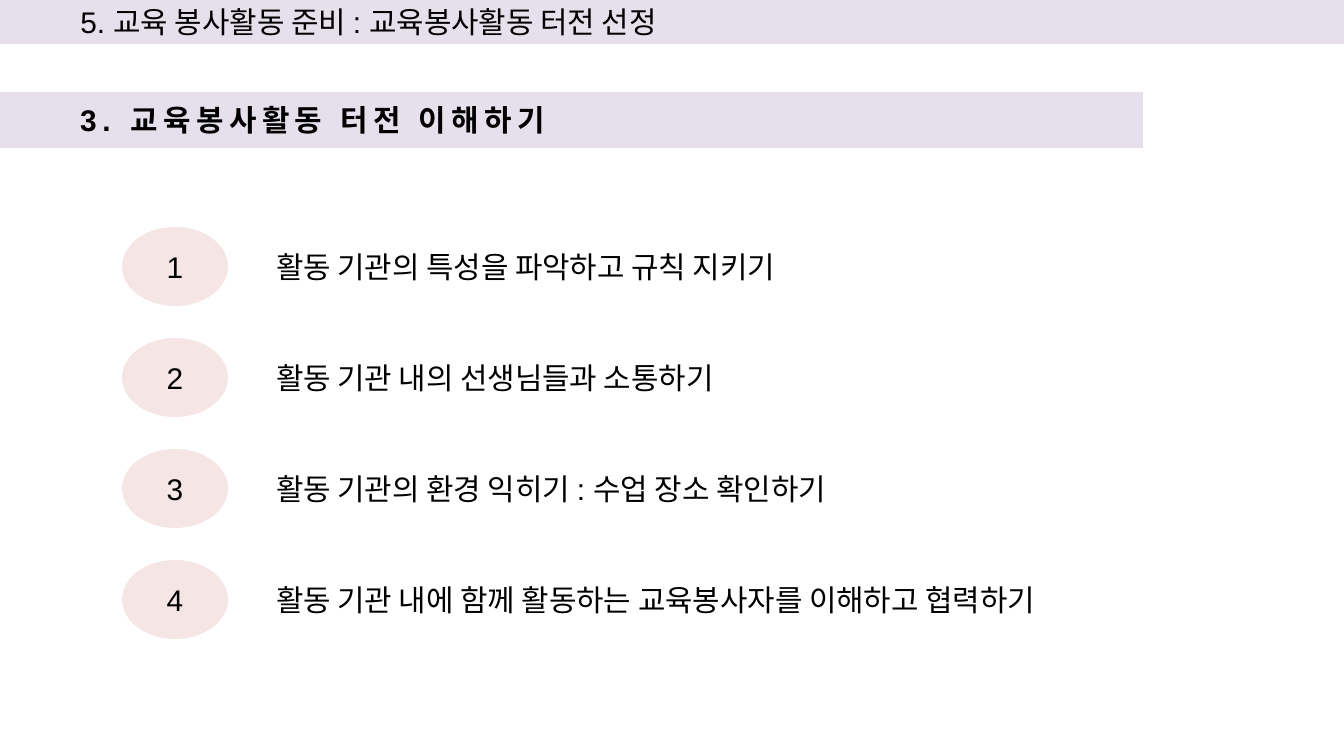
from lxml import etree
from pptx import Presentation
from pptx import util as u
from pptx.dml.color import RGBColor
from pptx.enum import shapes, text
from pptx.oxml.ns import qn

EMU_PER_PX = 914400 / 134.4
LILAC, ROSE, BLACK = "E6E0EC", "F2DCDB", "000000"
LEFT, CENTER, JUSTIFY = text.PP_ALIGN.LEFT, text.PP_ALIGN.CENTER, text.PP_ALIGN.JUSTIFY


def px(length):
    return u.Emu(round(length * EMU_PER_PX))


def format_shape(shape, box, words, fill=None, align=LEFT, indent=0, **font_values):
    shape.left, shape.top, shape.width, shape.height = map(px, box)
    if fill:
        shape.fill.solid()
        shape.fill.fore_color.rgb = RGBColor.from_string(fill)
    else:
        shape.fill.background()
    shape.line.fill.background()

    frame = shape.text_frame
    frame.word_wrap = True
    frame.auto_size = text.MSO_AUTO_SIZE.NONE
    frame.vertical_anchor = text.MSO_ANCHOR.MIDDLE
    paragraph = frame.paragraphs[0]
    paragraph.alignment = align
    if indent:
        paragraph._p.get_or_add_pPr().set("marL", str(px(indent)))
    run = paragraph.add_run()
    run.text = words
    values = {"name": "Arial", "size": u.Pt(16), "bold": False, **font_values}
    for name, value in values.items():
        setattr(run.font, name, value)
    run.font.color.rgb = RGBColor.from_string(BLACK)
    return run


presentation = Presentation()
presentation.slide_width, presentation.slide_height = px(1344), px(756)
slide = presentation.slides.add_slide(presentation.slide_layouts[5])

# Chapter bar across the top
format_shape(slide.shapes.title, (0, 0, 1344, 44),
             "5. 교육 봉사활동 준비 : 교육봉사활동 터전 선정 ",
             fill=LILAC, align=JUSTIFY, indent=67)

# Section heading with widely spaced letters
section = slide.shapes.add_shape(shapes.MSO_SHAPE.RECTANGLE, 0, 0, 0, 0)
section.shadow.inherit = False
section_run = format_shape(section, (0, 92, 1143, 56), "3. 교육봉사활동 터전 이해하기",
                           fill=LILAC, align=JUSTIFY, indent=67, bold=True)
section_run.font._element.set("spc", "300")

# Numbered guidelines
guidelines = [
    "활동 기관의 특성을 파악하고 규칙 지키기",
    "활동 기관 내의 선생님들과 소통하기",
    "활동 기관의 환경 익히기 : 수업 장소 확인하기",
    "활동 기관 내에 함께 활동하는 교육봉사자를 이해하고 협력하기",
]
for index, guideline in enumerate(guidelines):
    top = 227 + index * 111
    label = slide.shapes.add_shape(shapes.MSO_SHAPE.ROUNDED_RECTANGLE, 0, 0, 0, 0)
    label.shadow.inherit = False
    format_shape(label, (259, top, 1005, 79), guideline)

    badge = slide.shapes.add_shape(shapes.MSO_SHAPE.OVAL, 0, 0, 0, 0)
    badge.shadow.inherit = False
    format_shape(badge, (122, top, 106, 79), str(index + 1), fill=ROSE, align=CENTER)
    # Badge fill at 70 % opacity
    color = badge._element.spPr.find(qn("a:solidFill"))[0]
    etree.SubElement(color, qn("a:alpha"), val="70000")

presentation.save("out.pptx")
